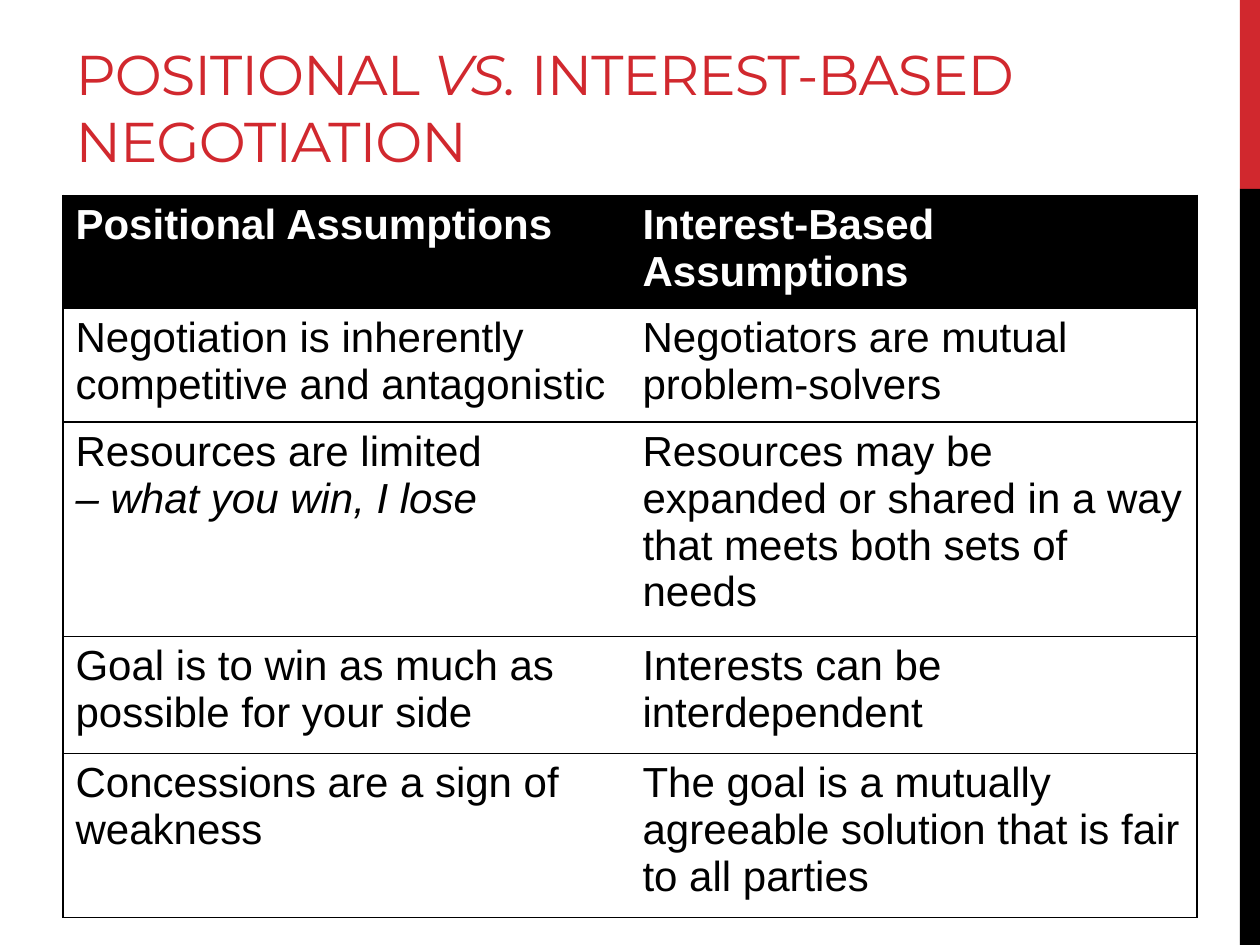
from lxml import etree
from pptx import Presentation
from pptx import util as u
from pptx.dml.color import RGBColor
from pptx.enum import shapes, text
from pptx.oxml import ns

RED, BLACK, WHITE = "D1282E", "000000", "FFFFFF"
ROWS = [
    ("Positional Assumptions", "Interest-Based Assumptions"),
    ("Negotiation is inherently competitive and antagonistic",
     "Negotiators are mutual problem-solvers"),
    ("Resources are limited\n– what you win, I lose",
     "Resources may be expanded or shared in a way that meets both sets of needs"),
    ("Goal is to win as much as possible for your side",
     "Interests can be interdependent"),
    ("Concessions are a sign of weakness",
     "The goal is a mutually agreeable solution that is fair to all parties"),
]
HEIGHTS = [0.9, 0.9, 1.7, 0.93, 1.3]


def color(code):
    return RGBColor.from_string(code)


def place(shape, box):
    shape.left, shape.top, shape.width, shape.height = map(u.Inches, box)


def style(run, face, size, code, bold=False, italic=False):
    font = run.font
    font.name, font.size = face, u.Pt(size)
    font.bold, font.italic = bold, italic
    font.color.rgb = color(code)


def add_title(slide, box):
    title = slide.shapes.title
    place(title, box)
    frame = title.text_frame
    frame.word_wrap = True
    frame.auto_size = text.MSO_AUTO_SIZE.NONE
    frame.vertical_anchor = text.MSO_ANCHOR.BOTTOM
    para = frame.paragraphs[0]
    para.alignment = text.PP_ALIGN.LEFT
    for words in ("POSITIONAL ", "VS.", " INTEREST-BASED NEGOTIATION"):
        run = para.add_run()
        run.text = words
        style(run, "Montserrat", 32, RED, italic=words == "VS.")
        run.font._element.set("spc", "-60")


def add_band(slide, box):
    """Red over black strip, split at one fifth of the height."""
    left, top, width, height = box
    split = height / 5
    for code, start, size in ((RED, top, split), (BLACK, top + split, height - split)):
        bar = slide.shapes.add_shape(
            shapes.MSO_SHAPE.RECTANGLE,
            *map(u.Inches, (left, start, width, size)))
        bar.shadow.inherit = False
        bar.fill.solid()
        bar.fill.fore_color.rgb = color(code)
        bar.line.fill.background()


def set_edges(cell, shown):
    """Draw 1 pt black lines on the shown sides and none on the others."""
    props = cell._tc.get_or_add_tcPr()
    for side in "LRTB":
        line = etree.SubElement(props, ns.qn("a:ln" + side), w=str(u.Pt(1)))
        if side in shown:
            fill = etree.SubElement(line, ns.qn("a:solidFill"))
            etree.SubElement(fill, ns.qn("a:srgbClr"), val=BLACK)
        else:
            etree.SubElement(line, ns.qn("a:noFill"))


def fill_cell(cell, words, head):
    if head:
        cell.fill.solid()
        cell.fill.fore_color.rgb = color(BLACK)
    else:
        cell.fill.background()
    cell.text_frame.text = words
    for para in cell.text_frame.paragraphs:
        for run in para.runs:
            style(run, "Arial", 24, WHITE if head else BLACK,
                  bold=head, italic=run.text.startswith("–"))


def add_grid(slide, box):
    count = len(ROWS[0])
    table = slide.shapes.add_table(len(ROWS), count, *map(u.Inches, box)).table
    table.horz_banding = False
    for col in table.columns:
        col.width = u.Inches(box[2] / count)
    for r, (words, height) in enumerate(zip(ROWS, HEIGHTS)):
        table.rows[r].height = u.Inches(height)
        for c, part in enumerate(words):
            cell = table.cell(r, c)
            set_edges(cell, "TB" + ("L" if c == 0 else "R"))
            fill_cell(cell, part, r == 0)


def main():
    deck = Presentation()
    deck.slide_width, deck.slide_height = u.Inches(10), u.Inches(7.5)
    slide = deck.slides.add_slide(deck.slide_layouts.get_by_name("Title Only"))
    add_band(slide, (9.84, 0, 0.16, 7.5))
    add_title(slide, (0.5, 0.17, 9, 1.26))
    add_grid(slide, (0.5, 1.55, 9, sum(HEIGHTS)))
    deck.save("out.pptx")


if __name__ == "__main__":
    main()
